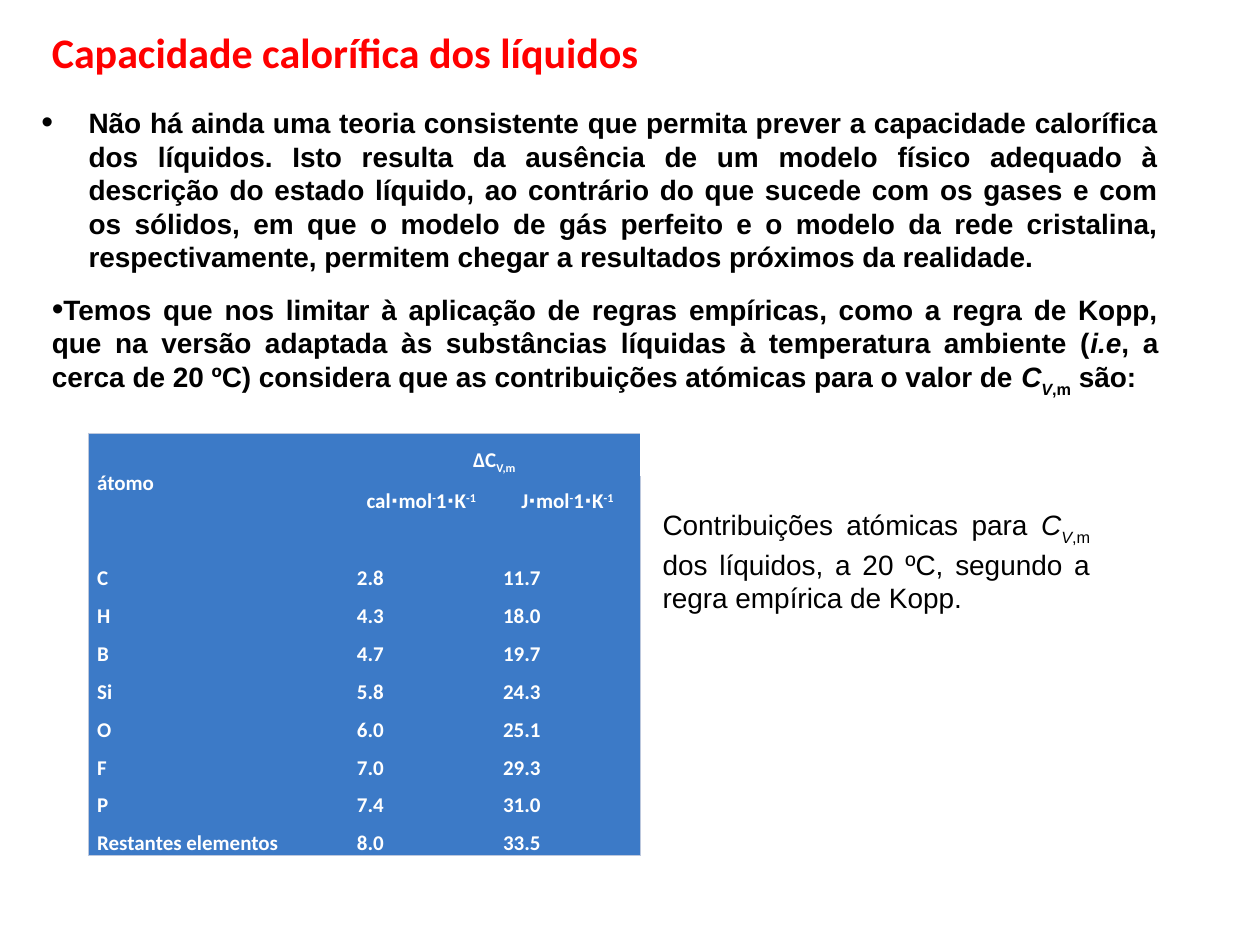
"""Build a slide on the heat capacity of liquids with a table of atomic contributions."""
from dataclasses import dataclass
from typing import NamedTuple

from lxml.etree import SubElement
from pptx import Presentation
from pptx.dml.color import RGBColor as Rgb
from pptx.enum.text import MSO_ANCHOR as Anchor, PP_ALIGN as Align
from pptx.oxml import parse_xml
from pptx.oxml.ns import nsdecls, qn
from pptx.util import Pt


@dataclass(frozen=True)
class Theme:
    red: str = "FF0000"
    black: str = "000000"
    white: str = "FFFFFF"
    blue: str = "3C7AC7"
    edge: str = "BDC8DD"
    head: float = 24
    body: float = 16
    cell: float = 12
    sans: str = "Arial"
    title: str = "Calibri"


class Run(NamedTuple):
    text: str
    base: int = 0
    slant: bool = False


class Box(NamedTuple):
    left: float
    top: float
    width: float
    height: float
    runs: list[Run]
    style: dict
    anchor: Anchor = Anchor.TOP
    align: Align = Align.JUSTIFY
    wrap: bool = True
    bullet: bool = False
    indent: float = 0


LOOK = Theme()
BODY = dict(size=LOOK.body, font=LOOK.sans, color=LOOK.black)
BOLD = BODY | dict(bold=True)
CELL = dict(size=LOOK.cell, font=LOOK.title, color=LOOK.white, bold=True)
HEAT = [Run("C", slant=True), Run("V", -30, True), Run(",m", -30)]

BOXES = [
    Box(22.5, 11.5, 363.5, 60.5, [Run("Capacidade calorífica dos líquidos")],
        dict(size=LOOK.head, font=LOOK.title, color=LOOK.red, bold=True),
        align=Align.LEFT, wrap=False),
    Box(16.5, 56, 652.5, 104.5, [Run(
        "Não há ainda uma teoria consistente que permita prever a capacidade "
        "calorífica dos líquidos. Isto resulta da ausência de um modelo físico "
        "adequado à descrição do estado líquido, ao contrário do que sucede com "
        "os gases e com os sólidos, em que o modelo de gás perfeito e o modelo "
        "da rede cristalina, respectivamente, permitem chegar a resultados "
        "próximos da realidade. ")],
        BOLD, anchor=Anchor.MIDDLE, bullet=True, indent=27),
    Box(371.5, 286.5, 258.5, 99.5, [
        Run("Contribuições atómicas para "), *HEAT,
        Run(" dos líquidos, a 20 ºC, segundo a regra empírica de Kopp.")], BODY),
    Box(22.5, 163.5, 646.5, 65.5, [
        Run("Temos que nos limitar à aplicação de regras empíricas, como a regra "
            "de Kopp, que na versão adaptada às substâncias líquidas à "
            "temperatura ambiente ("),
        Run("i.e", slant=True),
        Run(", a cerca de 20 ºC) considera que as contribuições atómicas para o "
            "valor de "), *HEAT, Run(" são: ")], BOLD, bullet=True),
]

ATOMS = [
    ("C", "2.8", "11.7"), ("H", "4.3", "18.0"), ("B", "4.7", "19.7"),
    ("Si", "5.8", "24.3"), ("O", "6.0", "25.1"), ("F", "7.0", "29.3"),
    ("P", "7.4", "31.0"), ("Restantes elementos", "8.0", "33.5"),
]
WIDTHS = [148.5, 83.5, 83.5]
HEIGHTS = [21.6, 44] + [21.6] * len(ATOMS)


def write(par, runs: list[Run], *, size: float, font: str, color: str,
          bold: bool = False, align: Align = Align.JUSTIFY) -> None:
    par.alignment = align
    for run in runs:
        part = par.add_run()
        part.text = run.text
        part.font.size, part.font.name = Pt(size), font
        part.font.bold, part.font.italic = bold, run.slant
        part.font.color.rgb = Rgb.from_string(color)
        if run.base:
            part.font._element.set("baseline", str(run.base * 1000))


def mark(par, indent: float) -> None:
    props = par._p.get_or_add_pPr()
    props.set("marL", str(Pt(indent)))
    props.set("indent", str(-Pt(indent)))
    SubElement(props, qn("a:buSzPct"), val="120000")
    SubElement(props, qn("a:buFont"), typeface=LOOK.sans)
    SubElement(props, qn("a:buChar"), char="•")


def draw(slide, box: Box) -> None:
    shape = slide.shapes.add_textbox(
        Pt(box.left), Pt(box.top), Pt(box.width), Pt(box.height))
    frame = shape.text_frame
    frame.word_wrap, frame.vertical_anchor = box.wrap, box.anchor
    par = frame.paragraphs[0]
    write(par, box.runs, align=box.align, **box.style)
    if box.bullet:
        mark(par, box.indent)


def rule(cell, sides: dict[str, bool]) -> None:
    solid = f'<a:solidFill><a:srgbClr val="{LOOK.edge}"/></a:solidFill>'
    props = cell._tc.get_or_add_tcPr()
    for spot, (side, shown) in enumerate(sides.items()):
        fill = solid if shown else "<a:noFill/>"
        props.insert(spot, parse_xml(
            f'<a:ln{side} {nsdecls("a")} w="{Pt(0.75)}">{fill}</a:ln{side}>'))


def units(name: str) -> list[Run]:
    return [Run(f"{name}⋅mol"), Run("-", 30), Run("1⋅K"), Run("-1", 30)]


def grid(slide) -> None:
    rows, cols = len(HEIGHTS), len(WIDTHS)
    table = slide.shapes.add_table(
        rows, cols, Pt(50.5), Pt(247.5), Pt(sum(WIDTHS)), Pt(sum(HEIGHTS))).table
    table.first_row = table.horz_banding = False
    for col, width in zip(table.columns, WIDTHS):
        col.width = Pt(width)
    for row, height in zip(table.rows, HEIGHTS):
        row.height = Pt(height)
    texts = {(0, 0): [Run("átomo")], (0, 1): [Run("ΔC"), Run("V,m", -25)],
             (1, 1): units("cal"), (1, 2): units("J")}
    for r, line in enumerate(ATOMS, 2):
        texts |= {(r, c): [Run(text)] for c, text in enumerate(line)}
    for r in range(rows):
        for c in range(cols):
            cell = table.cell(r, c)
            cell.fill.solid()
            cell.fill.fore_color.rgb = Rgb.from_string(LOOK.blue)
            cell.margin_left = cell.margin_right = Pt(5)
            cell.margin_top = cell.margin_bottom = 0
            rule(cell, {"L": c == 0, "R": c == cols - 1,
                        "T": r == 0, "B": r == rows - 1})
            par = cell.text_frame.paragraphs[0]
            par.line_spacing = 1.5
            align = Align.CENTER if r < 2 and c else Align.JUSTIFY
            write(par, texts.get((r, c), []), align=align, **CELL)
    table.cell(0, 0).margin_top = Pt(14)
    table.cell(0, 0).merge(table.cell(1, 0))
    table.cell(0, 1).merge(table.cell(0, 2))


def main() -> None:
    deck = Presentation()
    deck.slide_width, deck.slide_height = Pt(720), Pt(540)
    slide = deck.slides.add_slide(deck.slide_layouts[6])
    for box in BOXES:
        draw(slide, box)
    grid(slide)
    deck.save("out.pptx")


if __name__ == "__main__":
    main()
